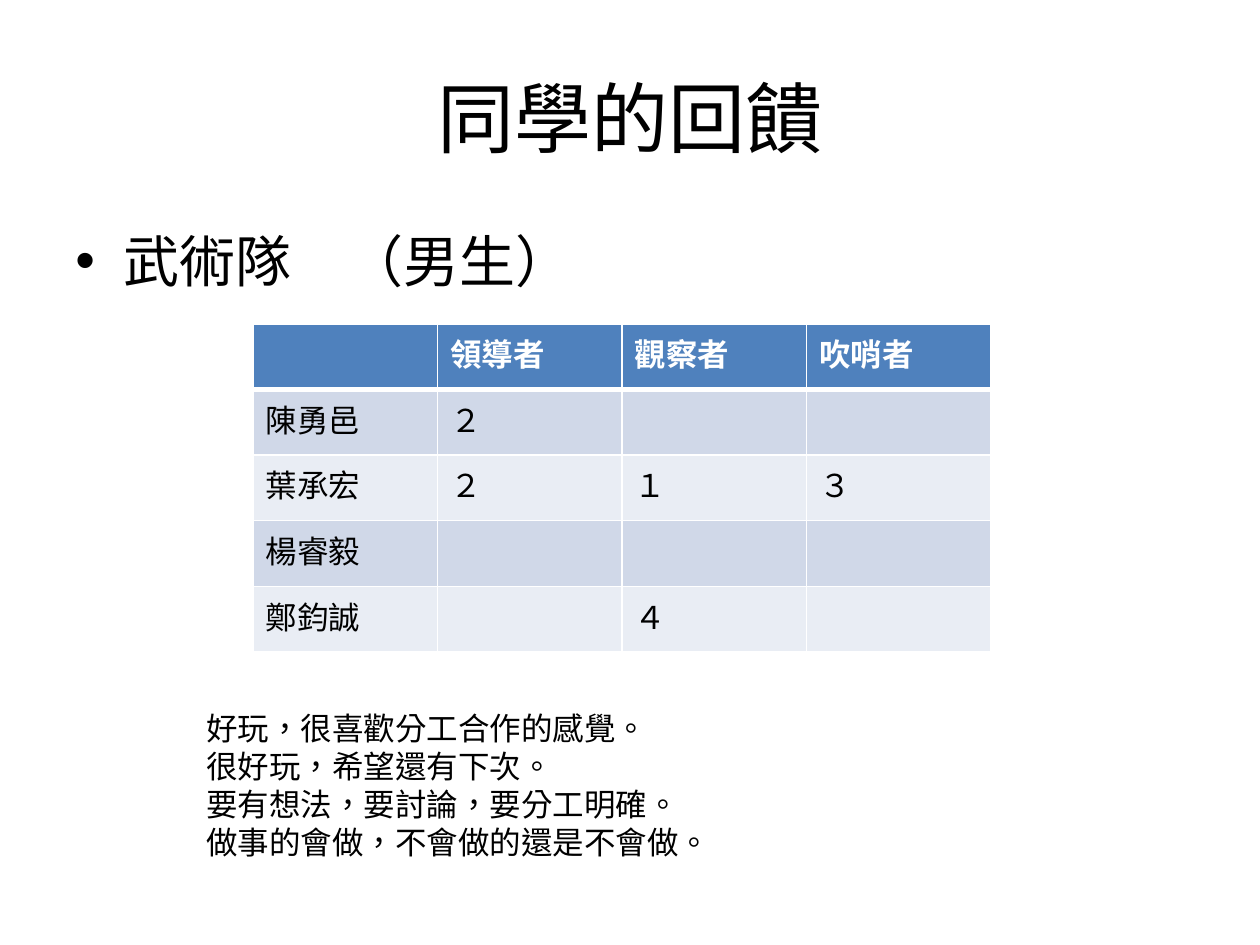
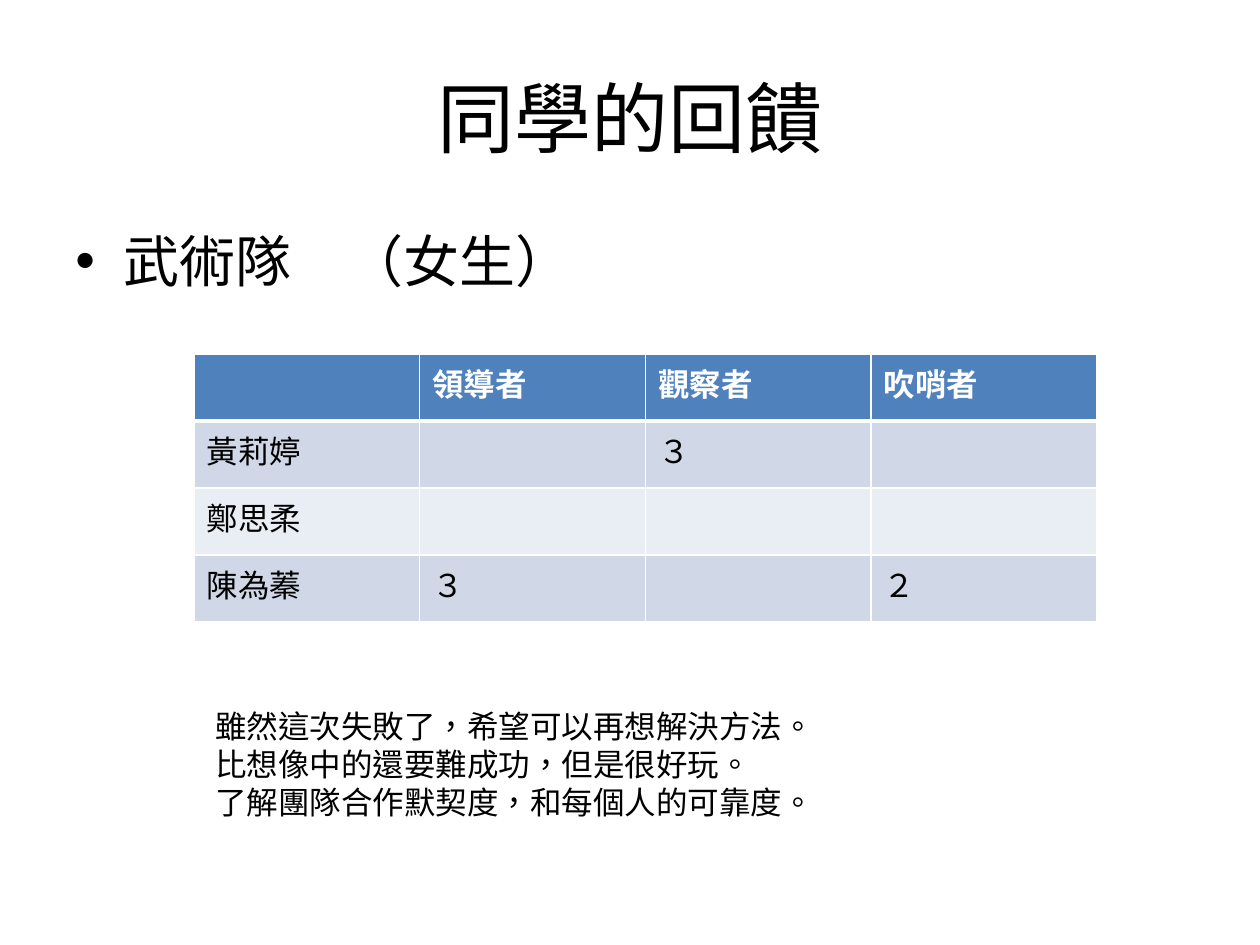
"""Build two slides of classmates' feedback, each with a role table and comments."""
from lxml.etree import SubElement
from pptx import Presentation
from pptx.dml.color import RGBColor
from pptx.enum.lang import MSO_LANGUAGE_ID
from pptx.enum.text import MSO_ANCHOR, PP_ALIGN
from pptx.oxml.ns import qn
from pptx.util import Emu, Pt

BLACK = RGBColor(0x00, 0x00, 0x00)
WHITE = RGBColor(0xFF, 0xFF, 0xFF)
HEADER_BLUE = RGBColor(0x4F, 0x81, 0xBD)
ROW_BANDS = [RGBColor(0xE9, 0xED, 0xF4), RGBColor(0xD0, 0xD8, 0xE8)]
FONT = "Calibri"
TITLE = "同學的回饋"
ROLES = ["", "領導者", "觀察者", "吹哨者"]

FEEDBACK = [
    {
        "group": "武術隊　（男生）",
        "table_box": (253, 324, 738, 328),
        "votes": [
            ["陳勇邑", "２", "", ""],
            ["葉承宏", "２", "１", "３"],
            ["楊睿毅", "", "", ""],
            ["鄭鈞誠", "", "４", ""],
        ],
        "comments_box": (194, 703, 963, 204),
        "comments": [
            "好玩，很喜歡分工合作的感覺。",
            "很好玩，希望還有下次。",
            "要有想法，要討論，要分工明確。",
            "做事的會做，不會做的還是不會做。",
        ],
    },
    {
        "group": "武術隊　（女生）",
        "table_box": (194, 354, 903, 268),
        "votes": [
            ["黃莉婷", "", "３", ""],
            ["鄭思柔", "", "", ""],
            ["陳為蓁", "３", "", "２"],
        ],
        "comments_box": (203, 701, 903, 127),
        "comments": [
            "雖然這次失敗了，希望可以再想解決方法。",
            "比想像中的還要難成功，但是很好玩。",
            "了解團隊合作默契度，和每個人的可靠度。",
        ],
    },
]


def px(length):
    return Emu(round(length * 914400 / 126))


def format_text(text_frame, size, color=BLACK, bold=False, bullet=None):
    text_frame.word_wrap = True
    for paragraph in text_frame.paragraphs:
        paragraph.font.size = Pt(size)
        for run in paragraph.runs:
            run.font.name = FONT
            run.font.size = Pt(size)
            run.font.bold = bold
            run.font.color.rgb = color
            run.font.language_id = MSO_LANGUAGE_ID.TRADITIONAL_CHINESE
        if bullet:
            tag, attributes = bullet
            properties = paragraph._p.get_or_add_pPr()
            properties.set("marL", str(px(48)))
            properties.set("indent", str(-px(48)))
            SubElement(properties, qn("a:buFont"), typeface="Arial")
            SubElement(properties, qn(tag), attributes)


presentation = Presentation()
presentation.slide_width = px(1260)
presentation.slide_height = px(945)

for feedback in FEEDBACK:
    slide = presentation.slides.add_slide(presentation.slide_layouts[6])

    title = slide.shapes.add_textbox(px(63), px(38), px(1134), px(157)).text_frame
    title.text = TITLE
    title.vertical_anchor = MSO_ANCHOR.MIDDLE
    title.paragraphs[0].alignment = PP_ALIGN.CENTER
    format_text(title, 44)

    group = slide.shapes.add_textbox(px(63), px(220), px(1134), px(624)).text_frame
    group.text = feedback["group"]
    group.paragraphs[0].space_before = Pt(6.4)
    format_text(group, 32, bullet=("a:buChar", {"char": "•"}))

    rows = [ROLES] + feedback["votes"]
    table_box = [px(length) for length in feedback["table_box"]]
    table = slide.shapes.add_table(len(rows), len(ROLES), *table_box).table
    for row_index, row in enumerate(rows):
        is_header = row_index == 0
        border_widths = {
            "a:lnL": 1,
            "a:lnR": 1,
            "a:lnT": 3 if row_index == 1 else 1,
            "a:lnB": 3 if is_header else 1,
        }
        for column_index, value in enumerate(row):
            cell = table.cell(row_index, column_index)
            cell.text_frame.text = value
            format_text(cell.text_frame, 18, WHITE if is_header else BLACK, is_header)
            cell_properties = cell._tc.get_or_add_tcPr()
            for side, width in border_widths.items():
                line = SubElement(cell_properties, qn(side), w=str(Pt(width)))
                line_fill = SubElement(line, qn("a:solidFill"))
                SubElement(line_fill, qn("a:srgbClr"), val=str(WHITE))
            cell.fill.solid()
            cell.fill.fore_color.rgb = HEADER_BLUE if is_header else ROW_BANDS[row_index % 2]

    comments_box = [px(length) for length in feedback["comments_box"]]
    comments = slide.shapes.add_textbox(*comments_box).text_frame
    comments.text = "\n".join(feedback["comments"])
    format_text(comments, 18, bullet=("a:buAutoNum", {"type": "arabicDbPeriod"}))

presentation.save("out.pptx")
